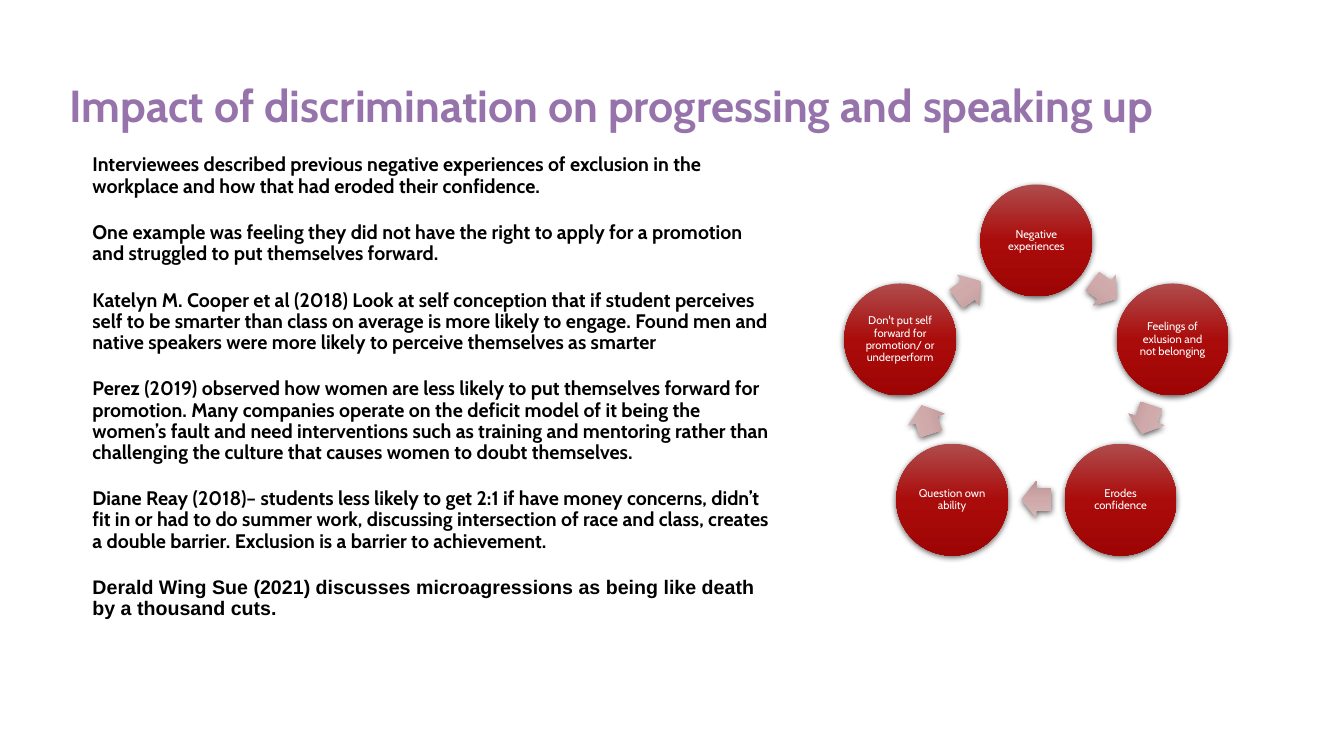
from math import cos, radians, sin

from lxml import etree
from pptx import Presentation
from pptx.dml.color import RGBColor
from pptx.enum.shapes import MSO_SHAPE
from pptx.enum.text import MSO_ANCHOR, MSO_AUTO_SIZE, PP_ALIGN
from pptx.oxml import parse_xml
from pptx.oxml.ns import nsdecls, qn
from pptx.util import Cm, Pt

CIRCLE, ARROW = MSO_SHAPE.OVAL, MSO_SHAPE.RIGHT_ARROW
TOP, MIDDLE = MSO_ANCHOR.TOP, MSO_ANCHOR.MIDDLE
LEFT, CENTER = PP_ALIGN.LEFT, PP_ALIGN.CENTER
NO_AUTOFIT = MSO_AUTO_SIZE.NONE
TITLE_ONLY = 5

COLORS = {"title": "9674AB", "body": "000000", "label": "FFFFFF", "shadow": "000000"}
GRADIENTS = {
    "stage": ["AF4C4C", "AA0C0B", "9E0403"],
    "arrow": ["D5B6B6", "D0AAAA", "BB9595"],
}
TITLE_FONT = {"name": "Cabin", "size": Pt(32), "bold": True}
BODY_FONT = {"name": "Cabin", "size": Pt(14), "bold": True}
LABEL_FONT = {"name": "Cabin", "size": Pt(8), "bold": False}

TITLE = "Impact of discrimination on progressing and speaking up"
FINDINGS = [
    "Interviewees described previous negative experiences of exclusion in the "
    "workplace and how that had eroded their confidence.",
    "One example was feeling they did not have the right to apply for a promotion "
    "and struggled to put themselves forward.",
    "Katelyn M. Cooper et al (2018) Look at self conception that if student perceives "
    "self to be smarter than class on average is more likely to engage. Found men and "
    "native speakers were more likely to perceive themselves as smarter",
    "Perez (2019) observed how women are less likely to put themselves forward for "
    "promotion. Many companies operate on the deficit model of it being the women’s "
    "fault and need interventions such as training and mentoring rather than "
    "challenging the culture that causes women to doubt themselves.",
    "Diane Reay (2018)– students less likely to get 2:1 if have money concerns, didn’t "
    "fit in or had to do summer work, discussing intersection of race and class, "
    "creates a double barrier. Exclusion is a barrier to achievement.",
    "Derald Wing Sue (2021) discusses microagressions as being like death by a "
    "thousand cuts.",
]
STAGES = [
    "Negative experiences",
    "Feelings of exlusion and not belonging",
    "Erodes confidence",
    "Question own ability",
    "Don't put self forward for promotion/ or underperform",
]

# Cycle geometry in centimetres
CYCLE_X, CYCLE_Y = 26.12, 9.67
STAGE_RADIUS, ARROW_RADIUS = 3.61, 2.92
STAGE_SIZE = (2.82, 2.82)
ARROW_SIZE = (0.75, 0.95)


def write_paragraph(paragraph, text, font, color, align=LEFT):
    run = paragraph.add_run()
    run.text = text
    for name, value in font.items():
        setattr(run.font, name, value)
    run.font.color.rgb = RGBColor.from_string(COLORS[color])
    paragraph.alignment = align
    paragraph.line_spacing = 0.9


def set_gradient_and_shadow(shape, colors):
    """Fill from top to bottom with three colours and add a soft shadow below."""
    shape.line.fill.background()
    shape.fill.gradient()
    shape.fill.gradient_angle = 270
    stops = shape._element.spPr.find(qn("a:gradFill")).find(qn("a:gsLst"))
    for stop in list(stops):
        stops.remove(stop)
    for position, color in zip((0, 50000, 100000), colors):
        stop = etree.SubElement(stops, qn("a:gs"), pos=str(position))
        etree.SubElement(stop, qn("a:srgbClr"), val=color)

    shape.shadow.inherit = False
    effects = shape._element.spPr.find(qn("a:effectLst"))
    effects.append(parse_xml(
        f'<a:outerShdw {nsdecls("a")} blurRad="{Pt(4.5)}" dist="{Pt(1.5)}" '
        f'dir="5400000" rotWithShape="0"><a:srgbClr val="{COLORS["shadow"]}">'
        '<a:alpha val="63000"/></a:srgbClr></a:outerShdw>'))


def add_on_ring(slide, preset, angle, radius, size, colors):
    """Centre a shape on the cycle, at an angle clockwise from the top."""
    width, height = size
    x = CYCLE_X + radius * sin(radians(angle))
    y = CYCLE_Y - radius * cos(radians(angle))
    shape = slide.shapes.add_shape(
        preset, Cm(x - width / 2), Cm(y - height / 2), Cm(width), Cm(height))
    set_gradient_and_shadow(shape, colors)
    return shape


def add_stage(slide, label, angle):
    stage = add_on_ring(slide, CIRCLE, angle, STAGE_RADIUS, STAGE_SIZE, GRADIENTS["stage"])
    frame = stage.text_frame
    frame.word_wrap = True
    frame.vertical_anchor = MIDDLE
    for side in ("left", "top", "right", "bottom"):
        setattr(frame, f"margin_{side}", Cm(0.03))
    write_paragraph(frame.paragraphs[0], label, LABEL_FONT, "label", CENTER)


def add_cycle_arrow(slide, angle):
    arrow = add_on_ring(slide, ARROW, angle, ARROW_RADIUS, ARROW_SIZE, GRADIENTS["arrow"])
    arrow.rotation = angle
    arrow.adjustments[0] = 0.6
    arrow.adjustments[1] = 0.5


def add_cycle(slide):
    step = 360 / len(STAGES)
    for index, label in enumerate(STAGES):
        add_stage(slide, label, index * step)
        add_cycle_arrow(slide, (index + 0.5) * step)


def set_title(slide):
    title = slide.shapes.title
    title.left, title.top, title.width, title.height = Cm(1.5), Cm(1.98), Cm(30.96), Cm(1.98)
    frame = title.text_frame
    frame.word_wrap = True
    frame.auto_size = NO_AUTOFIT
    frame.vertical_anchor = TOP
    write_paragraph(frame.paragraphs[0], TITLE, TITLE_FONT, "title")


def add_findings(slide):
    box = slide.shapes.add_textbox(Cm(2.08), Cm(3.78), Cm(17.68), Cm(10.67))
    frame = box.text_frame
    frame.word_wrap = True
    for index, finding in enumerate(FINDINGS):
        paragraph = frame.add_paragraph() if index else frame.paragraphs[0]
        is_last = index == len(FINDINGS) - 1
        font = {**BODY_FONT, "name": "Arial"} if is_last else BODY_FONT
        write_paragraph(paragraph, finding, font, "body")
        paragraph.space_before = Pt(10 if index else 0)
        paragraph.space_after = Pt(8)


def main():
    deck = Presentation()
    deck.slide_width, deck.slide_height = Cm(33.87), Cm(19.05)
    slide = deck.slides.add_slide(deck.slide_layouts[TITLE_ONLY])
    set_title(slide)
    add_findings(slide)
    add_cycle(slide)
    deck.save("out.pptx")


if __name__ == "__main__":
    main()
